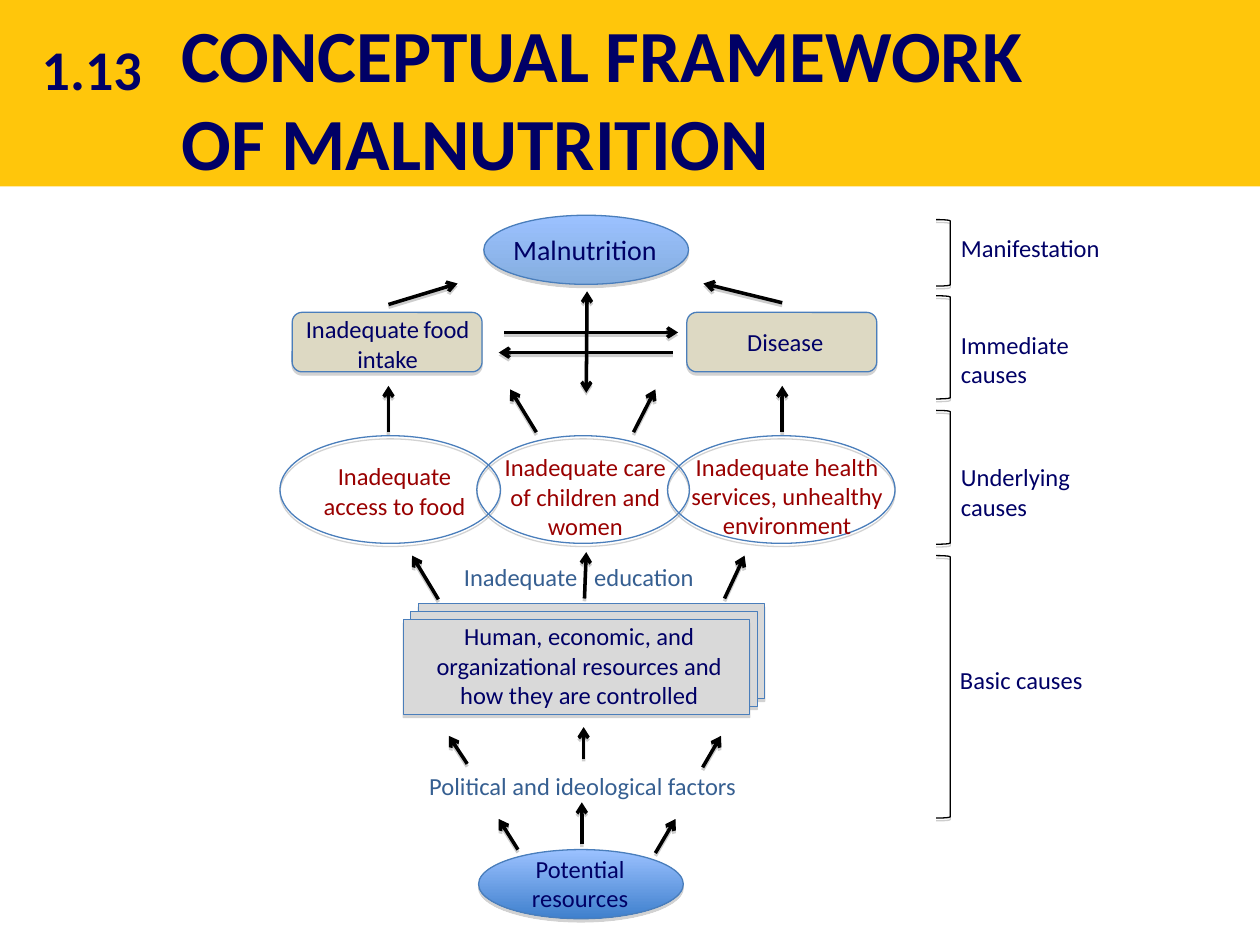
from lxml import etree
from pptx import Presentation
from pptx.dml.color import RGBColor
from pptx.enum.shapes import MSO_CONNECTOR, MSO_SHAPE
from pptx.enum.text import MSO_ANCHOR, MSO_AUTO_SIZE, PP_ALIGN
from pptx.oxml.ns import qn
from pptx.util import Pt

OVAL, RECT, ROUND = MSO_SHAPE.OVAL, MSO_SHAPE.RECTANGLE, MSO_SHAPE.ROUNDED_RECTANGLE
BRACKET, STRAIGHT = MSO_SHAPE.RIGHT_BRACKET, MSO_CONNECTOR.STRAIGHT
LEFT, CENTER, TOP = PP_ALIGN.LEFT, PP_ALIGN.CENTER, MSO_ANCHOR.TOP
FIXED = MSO_AUTO_SIZE.NONE

THEME = {
    "font": "Calibri",
    "navy": "000066", "red": "990000", "steel": "365F91", "black": "000000",
    "band": "FFC60B", "outline": "4A7EBB", "tan": "DDD9C3", "grey": "D9D9D9",
    "shadow": "808080",
    "sky": ("9BC1FF", "85AEDF"), "blue": ("9BC1FF", "3F80CD"),
    "title": 42, "number": 32, "top": 16, "body": 14, "gap": 11,
    "hairline": 0.75, "arrow": 2,
}

# Content: title and section number
TITLE = "CONCEPTUAL FRAMEWORK\vOF MALNUTRITION"
NUMBER = "1.13"

# Nodes: kind, (left, top, width, height), fill
STACK = [(RECT, (239 - 4.3 * i, 345 + 4.6 * i, 198, 54), "grey") for i in range(3)]
NODES = STACK + [
    (OVAL, (276.5, 123, 117, 39.5), "sky"),
    (ROUND, (167, 178.5, 108.5, 34), "tan"),
    (ROUND, (392.5, 178.5, 108.5, 34), "tan"),
    (OVAL, (160, 249, 126, 61.5), None),
    (OVAL, (272.5, 249, 121.5, 61.5), None),
    (OVAL, (381.5, 249, 130, 61.5), None),
    (OVAL, (273.5, 485.5, 117, 39.5), "blue"),
]

# Level brackets: top, height
BRACKET_LEFT, BRACKET_WIDTH = 535, 8
BRACKETS = [(125.5, 38), (169, 59), (234.5, 76.5), (317.5, 150)]

# Labels: text, (left, top, width, height), colour, alignment
LABELS = [
    ("Inadequate access to food", (173, 260, 105, 49), "red", CENTER),
    ("Inadequate care of children and women", (279.5, 255, 110, 49), "red", CENTER),
    ("Inadequate health services, unhealthy environment",
     (386.5, 254.5, 126.5, 53), "red", CENTER),
    ("Disease", (408, 183.5, 81.5, 27.5), "navy", CENTER),
    ("Human, economic, and organizational resources and how they are controlled",
     (232, 351.5, 198, 52), "navy", CENTER),
    ("Political and ideological factors", (230.5, 437, 205, 24.5), "steel", CENTER),
    ("Potential resources", (286.5, 484.5, 90, 36), "navy", CENTER),
    ("Manifestation", (542, 129.5, 95, 23), "navy", LEFT),
    ("Immediate causes", (542, 185, 90, 37.5), "navy", LEFT),
    ("Underlying causes", (542, 260.5, 90, 38), "navy", LEFT),
    ("Basic causes", (541.5, 376.5, 86.5, 30), "navy", LEFT),
]
FOOD_INTAKE = [[("Inadequate", "body"), (" ", "gap"), ("food", "body")],
               [("intake", "body")]]
EDUCATION, EDUCATION_TAB = "Inadequate\teducation", 74.5

# Arrows: from x, from y, to x, to y
ARROWS = [
    (222, 174, 261.5, 162), (447, 173, 402, 162),
    (288, 190, 387.5, 190), (384.5, 201.5, 285, 201.5),
    (222, 247, 222, 220.5), (447, 247, 447, 220.5),
    (306.5, 247, 291.5, 222.5), (362, 247, 374.5, 222.5),
    (250.5, 342.5, 235.5, 317.5), (334, 342, 335, 315.5), (414, 342, 425.5, 317.5),
    (267, 436.5, 256.5, 420.5), (333.5, 433.5, 333.5, 415.5),
    (401.5, 438.5, 412, 420.5),
    (296, 485.5, 285, 468), (332.5, 482.5, 332.5, 458.5), (374.5, 487.5, 386, 468),
]
TWO_WAY_ARROW = (335.5, 166.5, 335, 224.5)


def color(name):
    return RGBColor.from_string(THEME[name])


def points(values):
    return [Pt(value) for value in values]


def add_shadow(shape, distance, opacity):
    properties = shape._element.spPr
    effects = etree.SubElement(properties, qn("a:effectLst"))
    shadow = etree.SubElement(effects, qn("a:outerShdw"), dist=str(Pt(distance)),
                              dir="5400000", rotWithShape="0")
    tint = etree.SubElement(shadow, qn("a:srgbClr"), val=THEME["shadow"])
    etree.SubElement(tint, qn("a:alpha"), val=str(opacity * 1000))


def add_outline(shape, name, width):
    shape.line.color.rgb = color(name)
    shape.line.width = Pt(THEME[width])


def add_node(page, kind, place, fill):
    node = page.shapes.add_shape(kind, *points(place))
    if fill is None:
        node.fill.background()
    elif isinstance(THEME[fill], tuple):
        node.fill.gradient()
        node.fill.gradient_angle = 270
        for stop, value in zip(node.fill.gradient_stops, THEME[fill]):
            stop.color.rgb = RGBColor.from_string(value)
    else:
        node.fill.solid()
        node.fill.fore_color.rgb = color(fill)
    add_outline(node, "outline", "hairline")
    add_shadow(node, 1.8, 35)


def add_arrow(page, ends, both=False):
    arrow = page.shapes.add_connector(STRAIGHT, *points(ends))
    add_outline(arrow, "black", "arrow")
    line = arrow.line._get_or_add_ln()
    for tag in ["a:headEnd", "a:tailEnd"] if both else ["a:tailEnd"]:
        etree.SubElement(line, qn(tag), type="arrow")
    add_shadow(arrow, 1.6, 38)


def write(box, paragraphs, name="navy", align=LEFT, bold=False, wrap=True):
    frame = box.text_frame
    settings = {"word_wrap": wrap, "vertical_anchor": TOP, "auto_size": FIXED}
    for key, value in settings.items():
        setattr(frame, key, value)
    for index, spans in enumerate(paragraphs):
        para = frame.add_paragraph() if index else frame.paragraphs[0]
        para.alignment = align
        for text, size in spans:
            for part, words in enumerate(text.split("\v")):
                if part:
                    para.add_line_break()
                span = para.add_run()
                span.text = words
                look = {"name": THEME["font"], "size": Pt(THEME[size]), "bold": bold}
                for key, value in look.items():
                    setattr(span.font, key, value)
                span.font.color.rgb = color(name)
    return frame


def add_label(page, place, *content, **style):
    return write(page.shapes.add_textbox(*points(place)), *content, **style)


deck = Presentation()
deck.slide_width, deck.slide_height = points((720, 540))
page = deck.slides.add_slide(deck.slide_layouts[5])

# Title band, behind the title placeholder
band = page.shapes.add_shape(RECT, *points((0, 0, 720, 106.5)))
band.shadow.inherit = False
band.fill.solid()
band.fill.fore_color.rgb = color("band")
band.line.fill.background()
page.shapes._spTree.insert(2, band._element)

title = page.shapes.title
title.left, title.top, title.width, title.height = points((96.5, 1.5, 589, 43))
write(title, [[(TITLE, "title")]], bold=True)
add_label(page, (16.5, 16, 72, 46), [[(NUMBER, "number")]], align=CENTER,
          bold=True, wrap=False)

# Nodes and level brackets
for node in NODES:
    add_node(page, *node)
for top, height in BRACKETS:
    bracket = page.shapes.add_shape(
        BRACKET, *points((BRACKET_LEFT, top, BRACKET_WIDTH, height)))
    bracket.fill.background()
    add_outline(bracket, "black", "hairline")
    add_shadow(bracket, 1.6, 38)

# Labels
add_label(page, (283.5, 129.5, 101.5, 36), [[("Malnutrition", "top")]], align=CENTER)
for text, place, name, align in LABELS:
    add_label(page, place, [[(text, "body")]], name, align)
food = add_label(page, (168.5, 179.5, 106, 34), FOOD_INTAKE, align=CENTER)
for side in ("left", "top", "right", "bottom"):
    setattr(food, f"margin_{side}", 0)

# The tab leaves room for the arrow between the two words
education = add_label(page, (258, 317.5, 152, 19), [[(EDUCATION, "body")]], "steel")
tabs = etree.SubElement(education.paragraphs[0]._p.get_or_add_pPr(), qn("a:tabLst"))
etree.SubElement(tabs, qn("a:tab"), pos=str(Pt(EDUCATION_TAB)), algn="l")

# Arrows
for ends in ARROWS:
    add_arrow(page, ends)
add_arrow(page, TWO_WAY_ARROW, both=True)

deck.save("out.pptx")
